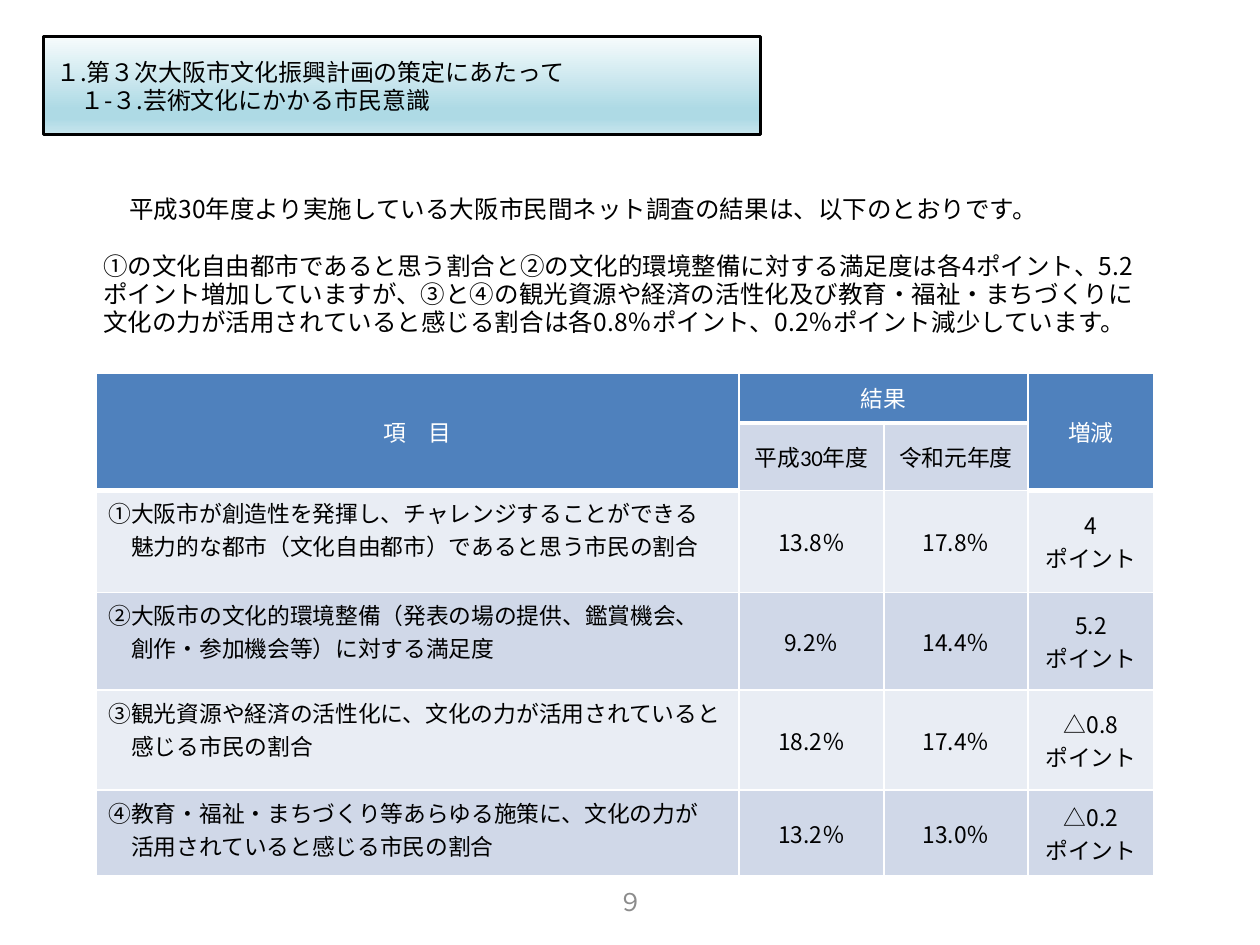
"""Build the slide on citizens' awareness of arts and culture."""
from typing import Any, NamedTuple

from lxml.etree import SubElement
from pptx import Presentation
from pptx.dml.color import RGBColor
from pptx.enum.shapes import MSO_SHAPE as Shape
from pptx.enum.text import MSO_ANCHOR as Anchor, PP_ALIGN as Align
from pptx.oxml.ns import qn
from pptx.util import Emu, Pt

SCALE = 914400 / 126
CJK, BLACK, WHITE = "Noto Sans CJK JP", "000000", "FFFFFF"
HEAD, DARK, LIGHT = "4F81BD", "D0D8E8", "E9EDF4"
TITLE_STOPS = ((0, "F6FBFC"), (74, "AEDAE5"), (83, "AEDAE5"), (100, "C9E6EE"))
COLUMNS = (643, 145, 144, 126)
ROWS = (50, 50, 102, 98, 100, 86)


class Run(NamedTuple):
    text: str
    size: float
    font: str = CJK
    color: str = BLACK


class Box(NamedTuple):
    left: int
    top: int
    width: int
    height: int


class Header(NamedTuple):
    text: str
    row: int
    col: int
    last_row: int
    last_col: int
    fill: str = HEAD
    color: str = WHITE


class Survey(NamedTuple):
    item: tuple[str, str]
    before: str
    after: str
    change: str


HEADERS = (
    Header("項　目", 0, 0, 1, 0),
    Header("結果", 0, 1, 0, 2),
    Header("増減", 0, 3, 1, 3),
    Header("平成30年度", 1, 1, 1, 1, DARK, BLACK),
    Header("令和元年度", 1, 2, 1, 2, DARK, BLACK),
)
SURVEYS = (
    Survey(("①大阪市が創造性を発揮し、チャレンジすることができる",
            "　魅力的な都市（文化自由都市）であると思う市民の割合"),
           "13.8％", "17.8％", "4"),
    Survey(("②大阪市の文化的環境整備（発表の場の提供、鑑賞機会、",
            "　創作・参加機会等）に対する満足度"),
           "9.2％", "14.4％", "5.2"),
    Survey(("③観光資源や経済の活性化に、文化の力が活用されていると",
            "　感じる市民の割合"),
           "18.2％", "17.4％", "△0.8"),
    Survey(("④教育・福祉・まちづくり等あらゆる施策に、文化の力が",
            "　活用されていると感じる市民の割合"),
           "13.2％", "13.0％", "△0.2"),
)


def px(n: int) -> Emu:
    """Turn pixels into EMU."""
    return Emu(round(n * SCALE))


def rgb(color: str) -> RGBColor:
    """Turn a hex string into a colour."""
    return RGBColor.from_string(color)


def apply(obj: Any, values: dict[str, Any]) -> None:
    """Set each named attribute on an object."""
    for name, value in values.items():
        setattr(obj, name, value)


def write(tf: Any, paragraphs: list[list[Run]], **fmt: Any) -> None:
    """Fill a text frame with paragraphs of runs in one paragraph format."""
    tf.word_wrap = True
    for i, runs in enumerate(paragraphs):
        p = tf.add_paragraph() if i else tf.paragraphs[0]
        apply(p, fmt)
        for run in runs:
            r = p.add_run()
            r.text = run.text
            apply(r.font, {"size": Pt(run.size), "name": run.font, "bold": False})
            r.font.color.rgb = rgb(run.color)
            SubElement(r.font._element, qn("a:ea"), typeface=CJK)


def add_text(slide: Any, box: Box, paragraphs: list[list[Run]], inset: int, **fmt: Any) -> Any:
    """Add a vertically centred text box and return its text frame."""
    tf = slide.shapes.add_textbox(*map(px, box)).text_frame
    apply(tf, {"vertical_anchor": Anchor.MIDDLE, "margin_left": px(inset), "margin_right": px(inset)})
    write(tf, paragraphs, **fmt)
    return tf


def add_title(slide: Any, box: Box, paragraphs: list[list[Run]]) -> None:
    """Add the outlined title panel with its vertical gradient."""
    sp = slide.shapes.add_shape(Shape.RECTANGLE, *map(px, box))
    sp.shadow.inherit = False
    sp.fill.gradient()
    sp.fill.gradient_angle = 270
    stops = sp.element.spPr.find(qn("a:gradFill")).find(qn("a:gsLst"))
    stops.clear()
    for position, color in TITLE_STOPS:
        gs = SubElement(stops, qn("a:gs"), pos=str(position * 1000))
        SubElement(gs, qn("a:srgbClr"), val=color)
    sp.line.color.rgb = rgb(BLACK)
    sp.line.width = Pt(1.75)
    sp.text_frame.vertical_anchor = Anchor.MIDDLE
    write(sp.text_frame, paragraphs, alignment=Align.LEFT)


def style_cell(cell: Any, fill: str) -> None:
    """Give a cell white borders and a solid fill."""
    tc_pr = cell._tc.get_or_add_tcPr()
    for side in "LRTB":
        width = 3 if side == "B" and fill == HEAD else 1
        ln = SubElement(tc_pr, qn(f"a:ln{side}"), w=str(Pt(width)))
        SubElement(SubElement(ln, qn("a:solidFill")), qn("a:srgbClr"), val=WHITE)
    cell.fill.solid()
    cell.fill.fore_color.rgb = rgb(fill)


def add_survey_table(slide: Any, left: int, top: int) -> None:
    """Add the table of survey results with its merged header."""
    box = Box(left, top, sum(COLUMNS), sum(ROWS))
    table = slide.shapes.add_table(len(ROWS), len(COLUMNS), *map(px, box)).table
    apply(table, {"first_row": False, "horz_banding": False})
    for column, width in zip(table.columns, COLUMNS):
        column.width = px(width)
    for row, height in zip(table.rows, ROWS):
        row.height = px(height)
    for h in HEADERS:
        for r in range(h.row, h.last_row + 1):
            for c in range(h.col, h.last_col + 1):
                style_cell(table.cell(r, c), h.fill)
        cell = table.cell(h.row, h.col)
        if (h.row, h.col) != (h.last_row, h.last_col):
            cell.merge(table.cell(h.last_row, h.last_col))
        cell.vertical_anchor = Anchor.MIDDLE
        write(cell.text_frame, [[Run(h.text, 13, "Calibri", h.color)]], alignment=Align.CENTER)
    for r, survey in enumerate(SURVEYS, 2):
        columns = (survey.item, (survey.before,), (survey.after,), (survey.change, "ポイント"))
        for c, lines in enumerate(columns):
            cell = table.cell(r, c)
            style_cell(cell, DARK if r % 2 else LIGHT)
            cell.vertical_anchor = Anchor.MIDDLE if c else Anchor.TOP
            write(cell.text_frame, [[Run(line, 13)] for line in lines],
                  alignment=Align.CENTER if c else Align.LEFT)


def main() -> None:
    """Build and save the slide."""
    prs = Presentation()
    apply(prs, {"slide_width": px(1260), "slide_height": px(945)})
    slide = prs.slides.add_slide(prs.slide_layouts[6])
    tf = add_text(slide, Box(67, 176, 1115, 180), [
        [Run("　", 15, "Arial"),
         Run("平成30年度より実施している大阪市民間ネット調査の結果は、以下のとおりです。", 14)],
        [Run("①の文化自由都市であると思う割合と②の文化的環境整備に対する満足度は各4ポイント、"
             "5.2ポイント増加していますが、③と④の観光資源や経済の活性化及び教育・福祉・まちづくりに"
             "文化の力が活用されていると感じる割合は各0.8％ポイント、0.2％ポイント減少しています。", 14)],
    ], 25, line_spacing=Pt(16))
    for p in tf.paragraphs:
        p._p.get_or_add_pPr().set("marL", str(px(11)))
    tf.paragraphs[1].space_before = Pt(16)
    add_text(slide, Box(362, 877, 294, 50), [[Run("９", 14, "Calibri", "8C8C8C")]], 13,
             alignment=Align.RIGHT)
    add_survey_table(slide, 96, 373)
    add_title(slide, Box(44, 37, 717, 98), [
        [Run("１.第３次大阪市文化振興計画の策定にあたって", 13.7)],
        [Run("　１-３.", 13.7), Run("芸術文化にかかる市民意識", 13.7, "Arial")],
    ])
    prs.save("out.pptx")


if __name__ == "__main__":
    main()
